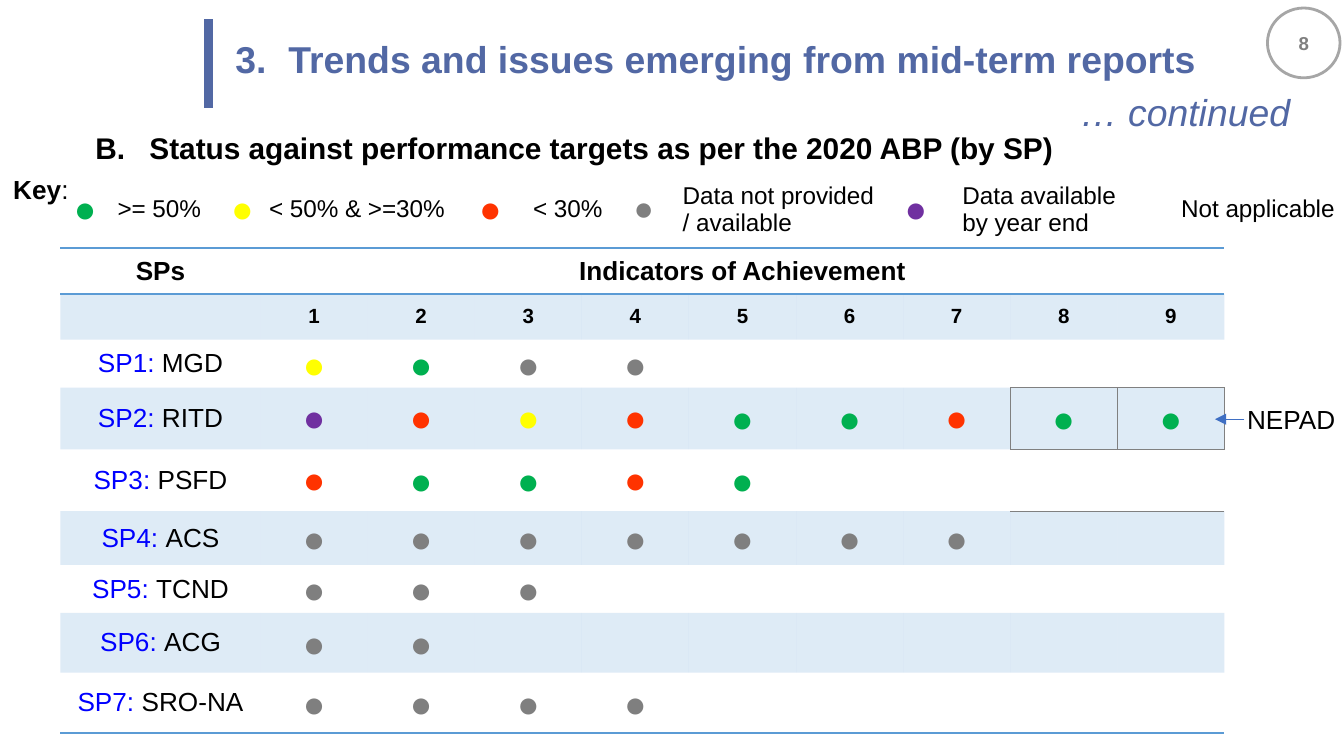
from dataclasses import dataclass

from lxml import etree
from pptx import Presentation
from pptx.dml.color import RGBColor
from pptx.enum.shapes import MSO_CONNECTOR, MSO_SHAPE
from pptx.enum.text import MSO_ANCHOR, PP_ALIGN
from pptx.oxml.ns import qn
from pptx.util import Pt

LEFT, MID, RIGHT = PP_ALIGN.LEFT, PP_ALIGN.CENTER, PP_ALIGN.RIGHT
TOP, CENTER = MSO_ANCHOR.TOP, MSO_ANCHOR.MIDDLE
LINE, OVAL = MSO_CONNECTOR.STRAIGHT, MSO_SHAPE.OVAL
PLAIN = "{2D5ABB26-0587-4C30-8999-92F81FD0307C}"  # no style, no grid

BLACK, NAVY, BLUE, SKY, GREY = "000000", "5268A4", "0000FF", "5B9BD5", "808080"
HUES = {"G": "00B050", "Y": "FFFF00", "R": "FF3300", "N": "7F7F7F", "P": "7030A0"}
PAD, TIGHT = (7.2, 3.6), (5.4, 0)


@dataclass
class Run:
    text: str
    size: float
    color: str = BLACK
    bold: bool = False
    italic: bool = False


@dataclass
class Box:
    left: float
    top: float
    width: float
    height: float
    runs: list[Run]
    align: PP_ALIGN = LEFT
    anchor: MSO_ANCHOR = TOP
    pad: tuple = PAD
    wrap: bool = True
    space: float = 1.0
    margin: float = 0
    hang: float = 0


@dataclass
class Plan:
    name: str
    unit: str
    height: float
    dots: str
    tight: bool = True


@dataclass
class Key:
    hue: str
    gap: float
    text: str
    width: float
    size: float = 20
    spot: PP_ALIGN = MID
    align: PP_ALIGN = MID


BOXES = [
    Box(8, 66, 643.6, 27, [Run("B.\tStatus against performance targets as per the 2020 ABP (by SP)",
                               16, bold=True)], margin=65, hang=29),
    Box(198.7, 46.8, 494, 30.2, [Run("… continued", 20, NAVY, italic=True)],
        RIGHT, CENTER, (1.44, 1.44), space=0.8),
    Box(124.6, 14.4, 555, 38.9, [Run("3.\tTrends and issues emerging from mid-term reports",
                                     20, NAVY, bold=True)],
        LEFT, CENTER, (1.44, 1.44), space=0.8, margin=28.4, hang=28.4),
    Box(661, 212.6, 61.8, 24.2, [Run("NEPAD", 14)], wrap=False),
    Box(0, 89.3, 48, 24.2, [Run("Key", 14, bold=True), Run(":", 14)], wrap=False),
]

PLANS = [
    Plan("SP1: ", "MGD", 25.7, "YGNN"),
    Plan("SP2: ", "RITD", 33, "PRYRGGRGG", False),
    Plan("SP3: ", "PSFD", 33.2, "RGGRG", False),
    Plan("SP4: ", "ACS", 28.8, "N" * 7),
    Plan("SP5: ", "TCND", 25.7, "NNN"),
    Plan("SP6: ", "ACG", 32, "NN"),
    Plan("SP7: ", "SRO-NA", 32.4, "NNNN"),
]

KEYS = [
    Key("G", 21.6, ">= 50%", 62.6),
    Key("Y", 17.3, "< 50% & >=30%", 114.5),
    Key("R", 28.8, "< 30%", 54),
    Key("N", 27.4, "Data not provided / available", 118.8, 18, align=LEFT),
    Key("P", 31, "Data available by year end", 100, spot=LEFT, align=LEFT),
    Key("", 16.6, "Not applicable", 95, align=LEFT),
]


def rgb(code: str) -> RGBColor:
    return RGBColor.from_string(code)


def write(para, runs: list[Run], align: PP_ALIGN, space: float = 1.0) -> None:
    para.alignment = align
    para.line_spacing = space
    for item in runs:
        run = para.add_run()
        run.text = item.text
        style = {"name": "Arial", "size": Pt(item.size), "bold": item.bold, "italic": item.italic}
        for key, value in style.items():
            setattr(run.font, key, value)
        run.font.color.rgb = rgb(item.color)


def inset(item, pad: tuple) -> None:
    for side, value in zip(("left", "top", "right", "bottom"), pad * 2):
        setattr(item, f"margin_{side}", Pt(value))


def draw_box(slide, box: Box) -> None:
    shape = slide.shapes.add_textbox(*map(Pt, (box.left, box.top, box.width, box.height)))
    frame = shape.text_frame
    frame.word_wrap = box.wrap
    frame.vertical_anchor = box.anchor
    inset(frame, box.pad)
    para = frame.paragraphs[0]
    write(para, box.runs, box.align, box.space)
    if box.hang:
        props = para._p.get_or_add_pPr()
        props.set("marL", str(Pt(box.margin)))
        props.set("indent", str(Pt(-box.hang)))


def draw_line(slide, ends: tuple, color: str, width: float, arrow: bool = False) -> None:
    line = slide.shapes.add_connector(LINE, *map(Pt, ends))
    line.line.color.rgb = rgb(color)
    line.line.width = Pt(width)
    if arrow:
        etree.SubElement(line.line._get_or_add_ln(), qn("a:tailEnd"), type="triangle")
    etree.SubElement(line._element.spPr, qn("a:effectLst"))


def add_grid(slide, left: float, top: float, cols: list, rows: list):
    size = map(Pt, (left, top, sum(cols), sum(rows)))
    grid = slide.shapes.add_table(len(rows), len(cols), *size).table
    grid.first_row = grid.horz_banding = False
    grid._tbl.tblPr.find(qn("a:tableStyleId")).text = PLAIN
    for col, width in zip(grid.columns, cols):
        col.width = Pt(width)
    for row, height in zip(grid.rows, rows):
        row.height = Pt(height)
    return grid


def fill_cell(cell, runs: list[Run], align: PP_ALIGN = MID, pad: tuple = PAD,
              space: float = 1.0, edges: dict | None = None, tint: bool = False) -> None:
    cell.vertical_anchor = CENTER
    inset(cell, pad)
    para = cell.text_frame.paragraphs[0]
    write(para, runs, align, space)
    if not runs:
        etree.SubElement(para._p, qn("a:endParaRPr"), sz="1100")
    props = cell._tc.get_or_add_tcPr()
    for side in "LRTB":  # borders come before the fill
        if edges and side in edges:
            color, width = edges[side]
            line = etree.SubElement(props, qn(f"a:ln{side}"), w=str(Pt(width)))
            solid = etree.SubElement(line, qn("a:solidFill"))
            etree.SubElement(solid, qn("a:srgbClr"), val=color)
    if tint:
        cell.fill.solid()
        cell.fill.fore_color.rgb = rgb(SKY)
        etree.SubElement(props.find(f".//{qn('a:solidFill')}[last()]") if not edges
                         else props[-1], qn("a:dummy")).getparent().remove(props[-1][-1])
        etree.SubElement(props[-1][0], qn("a:alpha"), val="20000")
    else:
        cell.fill.background()


def plan_edges(row: int, col: int) -> dict:
    thin, edges = (GREY, 0.25), {}
    if row == len(PLANS) - 1:
        edges["B"] = (SKY, 1)
    if col >= 8:  # frame around the last two indicators of SP2
        edges |= {0: {"B": thin}, 1: dict.fromkeys("LRTB", thin), 2: {"T": thin}}.get(row, {})
    return edges


def draw_plans(slide) -> None:
    grid = add_grid(slide, 32.4, 133, [107.2] + [57.4] * 9, [24.5, 24.5] + [p.height for p in PLANS])
    # Header rows
    rule = dict.fromkeys("TB", (SKY, 1))
    grid.cell(0, 1).merge(grid.cell(0, 9))
    for col in range(10):
        head = {0: "SPs", 1: "Indicators of Achievement"}.get(col)
        fill_cell(grid.cell(0, col), [Run(head, 14, bold=True)] if head else [], edges=rule)
        fill_cell(grid.cell(1, col), [Run(str(col), 11, bold=True)] if col else [], tint=True)
    # One row for each plan
    for row, plan in enumerate(PLANS):
        tint = row % 2 == 1
        for col in range(10):
            runs, pad, space = [], PAD, 1.0
            if col == 0:
                runs = [Run(plan.name, 14, BLUE), Run(plan.unit, 14)]
            elif col <= len(plan.dots):
                mark = plan.dots[col - 1]
                runs = [Run("●", 20, HUES[mark])]
                pad = TIGHT if plan.tight else PAD
                space = 1.07 if plan.tight or mark == "G" else 1.0
            fill_cell(grid.cell(row + 2, col), runs, MID, pad, space, plan_edges(row, col), tint)


def draw_keys(slide) -> None:
    cols = [width for key in KEYS for width in (key.gap, key.width)]
    grid = add_grid(slide, 32.4, 92.9, cols, [38.2])
    for place, key in enumerate(KEYS):
        dot = [Run("●", key.size, HUES[key.hue])] if key.hue else []
        fill_cell(grid.cell(0, 2 * place), dot, key.spot)
        fill_cell(grid.cell(0, 2 * place + 1), [Run(key.text, 13)], key.align)
    grid.cell(0, len(cols) - 1).margin_right = 0


def draw_badge(slide) -> None:
    badge = slide.shapes.add_shape(OVAL, Pt(679), Pt(4.3), Pt(38.9), Pt(37.4))
    badge.shadow.inherit = False
    badge.fill.solid()
    badge.fill.fore_color.rgb = rgb("FFFFFF")
    badge.line.color.rgb = rgb("A6A6A6")
    badge.line.width = Pt(1.5)
    badge.text_frame.vertical_anchor = CENTER
    write(badge.text_frame.paragraphs[0], [Run("8", 10, "7F7F7F", bold=True)], MID)


def main() -> None:
    deck = Presentation()
    deck.slide_width, deck.slide_height = Pt(720), Pt(405)
    slide = deck.slides.add_slide(deck.slide_layouts[6])
    draw_badge(slide)
    for box in BOXES:
        draw_box(slide, box)
    draw_line(slide, (111.6, 57.6, 111.6, 10.1), NAVY, 5)
    draw_plans(slide)
    draw_line(slide, (666.7, 224.6, 650.9, 224.6), "3F6FC3", 0.75, arrow=True)
    draw_keys(slide)


    deck.save("out.pptx")


if __name__ == "__main__":
    main()
